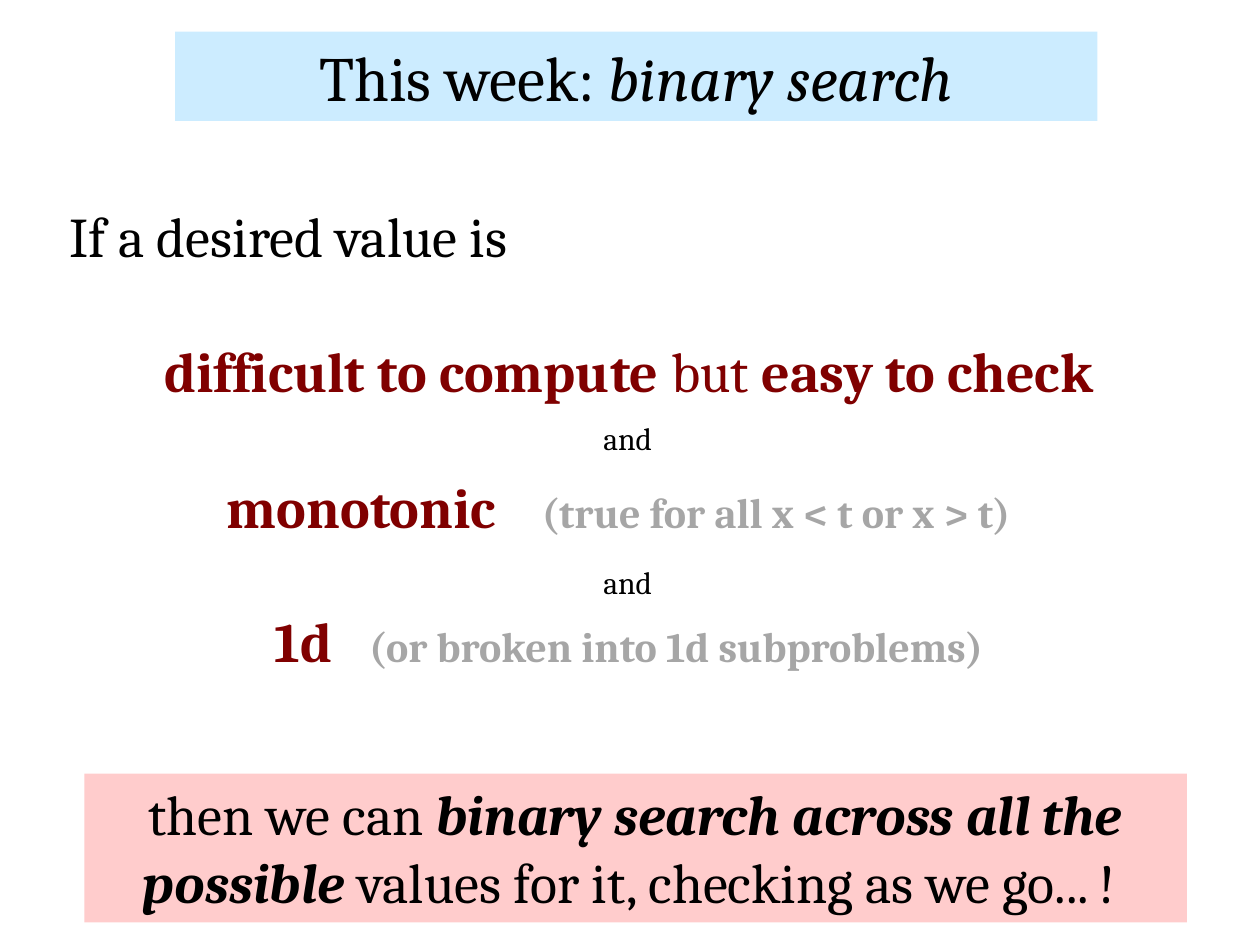
import pptx
import pptx.dml.color
import pptx.enum.text
import pptx.util

Inches = pptx.util.Inches
Pt = pptx.util.Pt
Align = pptx.enum.text.PP_ALIGN
Anchor = pptx.enum.text.MSO_ANCHOR

FONT = "Cambria"
BLACK, MAROON, GRAY = "000000", "800000", "A6A6A6"
SKY, PINK = "CCECFF", "FFCCCC"
LINE = 38.6  # height in points of one 32 pt line


def color(hex_string):
    return pptx.dml.color.RGBColor.from_string(hex_string)


def add_span(para, text, size=32, ink=BLACK, tracking=0, **formats):
    span = para.add_run()
    span.text = text
    values = {"name": FONT, "size": Pt(size), "bold": False, "italic": False}
    for name, value in (values | formats).items():
        setattr(span.font, name, value)
    span.font.color.rgb = color(ink)
    if tracking:
        span.font._element.set("spc", str(tracking * 100))


def fill_para(para, spans, align=Align.CENTER, before=0):
    para.alignment = align
    para.space_before = Pt(before)
    for text, formats in spans:
        add_span(para, text, **formats)


def place(shape, box, fill=None, anchor=Anchor.TOP, wrap=True):
    for name, value in zip(("left", "top", "width", "height"), box):
        setattr(shape, name, Inches(value))
    if fill:
        shape.fill.solid()
        shape.fill.fore_color.rgb = color(fill)
    frame = shape.text_frame
    frame.auto_size = pptx.enum.text.MSO_AUTO_SIZE.NONE
    frame.word_wrap = wrap
    frame.vertical_anchor = anchor
    return frame


def add_text(page, box, **formats):
    shape = page.shapes.add_textbox(*map(Inches, box))
    return place(shape, box, **formats)


def set_title(page, box):
    frame = place(page.shapes.title, box, fill=SKY, anchor=Anchor.MIDDLE)
    fill_para(frame.paragraphs[0], [
        ("This week: ", {"size": 36}),
        ("binary search", {"size": 36, "italic": True}),
    ])


def add_conditions(page, box):
    strong = {"ink": MAROON, "bold": True}
    note = {"size": 24, "ink": GRAY, "bold": True}
    left, top, width, height = box

    # Opening words, first and last condition
    frame = add_text(page, box)
    fill_para(frame.paragraphs[0], [("If a desired value is", {})], Align.LEFT)
    fill_para(frame.add_paragraph(), [
        ("difficult to compute ", strong),
        ("but", {"ink": MAROON}),
        (" easy to check", strong),
    ], before=LINE)
    fill_para(frame.add_paragraph(), [
        ("1d", strong),
        (" ", strong | {"tracking": 14}),
        ("(or broken into 1d subproblems)", note),
    ], before=3 * LINE)

    # Middle condition
    frame = add_text(page, (left + 0.7, top + 2.15, 7.52, 0.64))
    fill_para(frame.paragraphs[0], [
        ("monotonic", strong),
        (" ", note | {"tracking": 21}),
        ("(true for all x < t or x > t)", note),
    ])

    # Joining words
    for offset in (1.73, 2.87):
        frame = add_text(page, (left + 4.24, top + offset, 0.62, 0.4), wrap=False)
        fill_para(frame.paragraphs[0], [("and", {"size": 18})], Align.LEFT)


def add_conclusion(page, box):
    frame = add_text(page, box, fill=PINK)
    fill_para(frame.paragraphs[0], [
        ("then we can ", {}),
        ("binary search across all the possible ", {"bold": True, "italic": True}),
        ("values for it, checking as we go... ! ", {}),
    ])


def main():
    deck = pptx.Presentation()
    deck.slide_width, deck.slide_height = Inches(10), Inches(7.5)
    page = deck.slides.add_slide(deck.slide_layouts.get_by_name("Title Only"))
    set_title(page, (1.39, 0.25, 7.32, 0.71))
    add_conditions(page, (0.45, 1.55, 9.08, 3.87))
    add_conclusion(page, (0.67, 6.14, 8.75, 1.18))
    deck.save("out.pptx")


if __name__ == "__main__":
    main()
